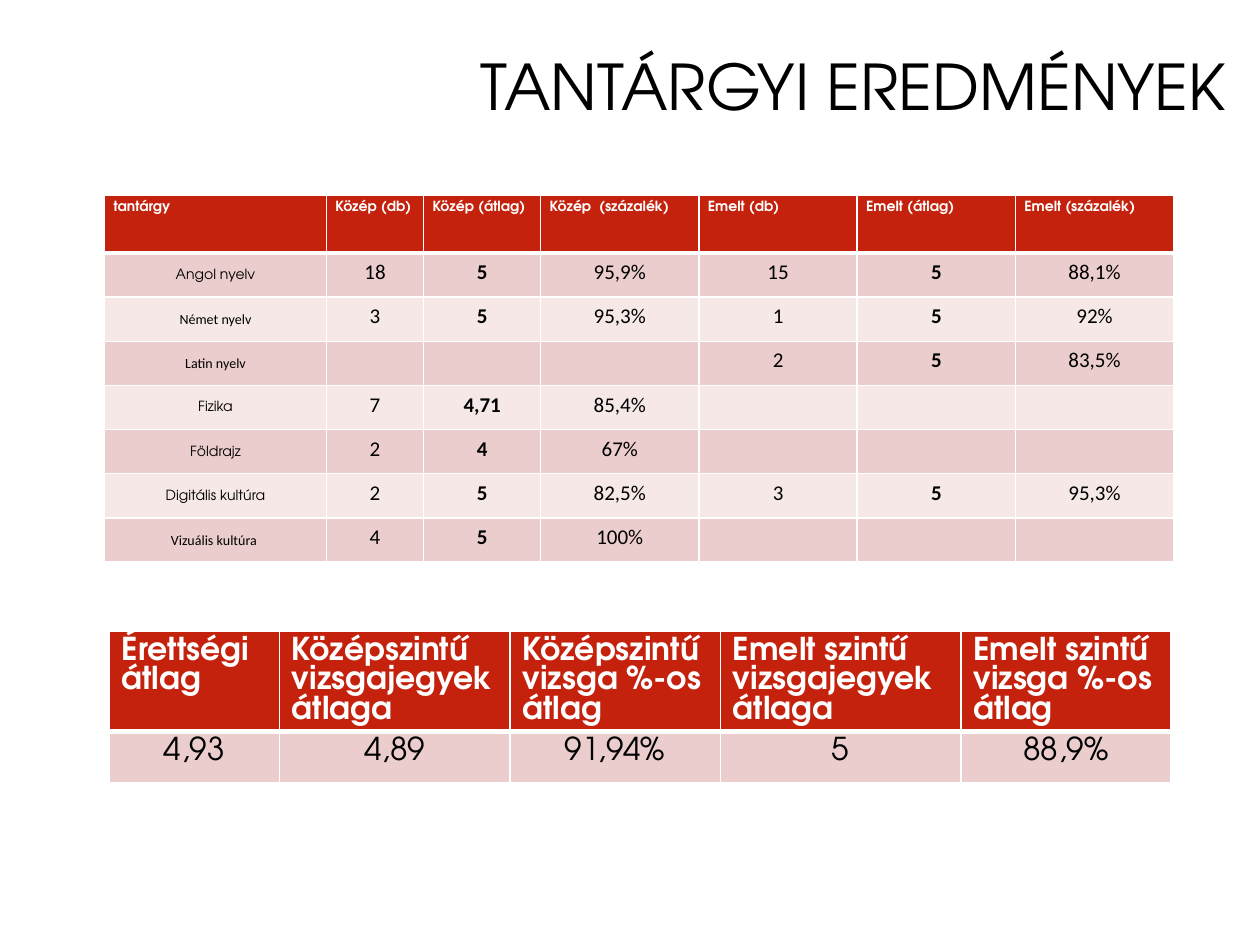
from lxml.etree import SubElement
from pptx import Presentation
from pptx.dml.color import RGBColor
from pptx.enum.text import MSO_ANCHOR, PP_ALIGN
from pptx.oxml.ns import qn
from pptx.util import Cm, Pt

COLORS = {"head": "C4220D", "dark": "EACDCC", "light": "F5E8E7",
          "white": "FFFFFF", "black": "000000"}
GEO = "TeX Gyre Adventor"
SANS = "Calibri"

SUBJECTS = [
    ["tantárgy", "Közép (db)", "Közép (átlag)", "Közép  (százalék)",
     "Emelt (db)", "Emelt (átlag)", "Emelt (százalék)"],
    ["Angol nyelv", "18", "5", "95,9%", "15", "5", "88,1%"],
    ["Német nyelv", "3", "5", "95,3%", "1", "5", "92%"],
    ["Latin nyelv", "", "", "", "2", "5", "83,5%"],
    ["Fizika", "7", "4,71", "85,4%", "", "", ""],
    ["Földrajz", "2", "4", "67%", "", "", ""],
    ["Digitális kultúra", "2", "5", "82,5%", "3", "5", "95,3%"],
    ["Vizuális kultúra ", "4", "5", "100%", "", "", ""],
]
SANS_NAMES = {"Német nyelv", "Latin nyelv", "Vizuális kultúra "}

TOTALS = [
    ["Érettségi átlag", "Középszintű vizsgajegyek átlaga",
     "Középszintű vizsga %-os átlag", "Emelt szintű vizsgajegyek átlaga",
     "Emelt szintű vizsga %-os átlag"],
    ["4,93", "4,89", "91,94%", "5", "88,9%"],
]


def rgb(key):
    return RGBColor.from_string(COLORS[key])


def add_text(par, text, size, font, color, bold=False):
    if not text:
        SubElement(par._p, qn("a:endParaRPr"), sz=str(size * 100))
        return
    run = par.add_run()
    run.text = text
    run.font.size = Pt(size)
    run.font.name = font
    run.font.bold = bold
    run.font.color.rgb = rgb(color)


def add_rules(cell, row):
    """Draw white cell edges; the header's lower edge is thick."""
    sides = {"lnL": 1, "lnR": 1, "lnT": 1, "lnB": 1}
    if row == 0:
        sides["lnB"] = 3
    elif row == 1:
        del sides["lnT"]  # shares the thick edge above
    props = cell._tc.get_or_add_tcPr()
    for side, width in sides.items():
        line = SubElement(props, qn("a:" + side), w=str(Pt(width)))
        fill = SubElement(line, qn("a:solidFill"))
        SubElement(fill, qn("a:srgbClr"), val=COLORS["white"])


def add_grid(slide, data, left, top, widths, heights, style):
    """Place a banded table; style(cell, row, col, text) sets the text."""
    shape = slide.shapes.add_table(len(data), len(widths), Cm(left), Cm(top),
                                   Cm(sum(widths)), Cm(sum(heights)))
    table = shape.table
    for col, width in zip(table.columns, widths):
        col.width = Cm(width)
    for r, (row, height) in enumerate(zip(data, heights)):
        table.rows[r].height = Cm(height)
        band = "head" if r == 0 else "dark" if r % 2 else "light"
        for c, text in enumerate(row):
            cell = table.cell(r, c)
            add_rules(cell, r)
            cell.fill.solid()
            cell.fill.fore_color.rgb = rgb(band)
            if r:
                cell.text_frame.paragraphs[0].alignment = PP_ALIGN.CENTER
            style(cell, r, c, text)


def style_subject(cell, row, col, text):
    cell.margin_left = cell.margin_right = Cm(0.18)
    cell.margin_top = cell.margin_bottom = Cm(0.1)
    par = cell.text_frame.paragraphs[0]
    par.line_spacing = 1.07
    par.space_after = Pt(8)
    if row == 0:
        add_text(par, text, 8, GEO, "white", True)
    elif col == 0:
        cell.vertical_anchor = MSO_ANCHOR.MIDDLE
        add_text(par, text, 8, SANS if text in SANS_NAMES else GEO, "black")
    else:
        add_text(par, text, 12, SANS, "black", col in (2, 5))


def style_total(cell, row, col, text):
    head = row == 0
    add_text(cell.text_frame.paragraphs[0], text, 18, GEO,
             "white" if head else "black", head)


def set_title(slide, left, top, width, height):
    title = slide.shapes.title
    title.left, title.top = Cm(left), Cm(top)
    title.width, title.height = Cm(width), Cm(height)
    frame = title.text_frame
    frame.word_wrap = True
    frame.vertical_anchor = MSO_ANCHOR.MIDDLE
    par = frame.paragraphs[0]
    par.alignment = PP_ALIGN.RIGHT
    par.line_spacing = 0.9
    add_text(par, "TANTÁRGYI EREDMÉNYEK", 36, GEO, "black")


def main():
    prs = Presentation()
    prs.slide_width, prs.slide_height = Cm(25.4), Cm(19.05)
    slide = prs.slides.add_slide(prs.slide_layouts[5])
    set_title(slide, 2.11, 1.12, 22.86, 1.4)
    add_grid(slide, SUBJECTS, 2.11, 3.93, [4.47, 1.96, 2.36] + [3.19] * 4,
             [1.17] + [0.89] * 7, style_subject)
    add_grid(slide, TOTALS, 2.2, 12.72, [3.43, 4.65, 4.24, 4.85, 4.24],
             [1.03] * 2, style_total)
    prs.save("out.pptx")


if __name__ == "__main__":
    main()
